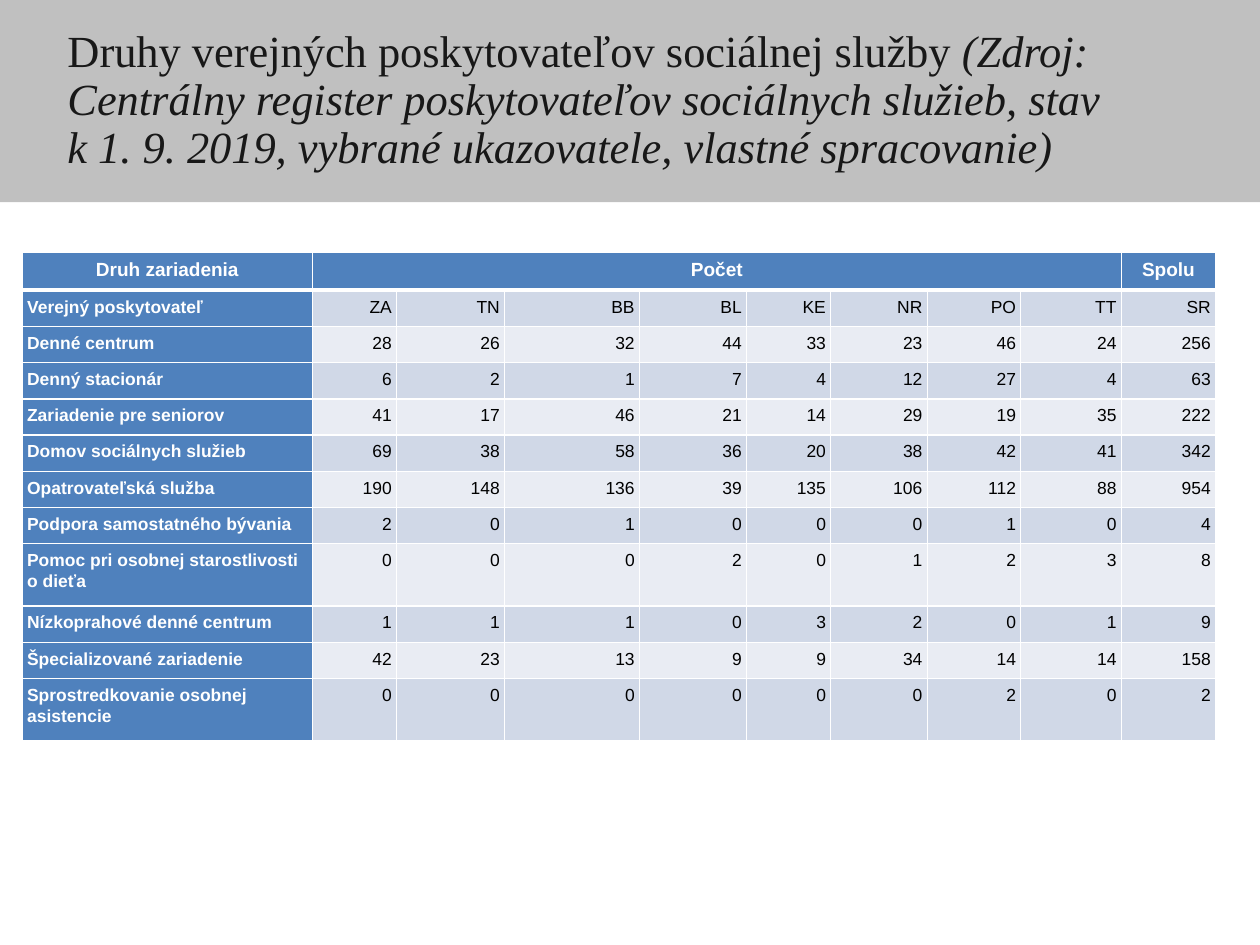
import dataclasses

import lxml.etree
import pptx
import pptx.dml.color
import pptx.enum.shapes
import pptx.enum.text
import pptx.oxml.ns
import pptx.util

Pt = pptx.util.Pt
Align = pptx.enum.text.PP_ALIGN


@dataclasses.dataclass(frozen=True)
class Theme:
    band: str = "C0C0C0"
    title: str = "181818"
    accent: str = "4F81BD"
    stripes: tuple = ("D0D8E7", "E9ECF3")
    light: str = "FFFFFF"
    dark: str = "000000"
    title_font: str = "Times New Roman"
    table_font: str = "Arial"
    title_size: float = 28
    header_size: float = 12
    body_size: float = 11
    rule: float = 0.96
    header_rule: float = 3


def rgb(value):
    return pptx.dml.color.RGBColor.from_string(value)


class SlideBuilder:
    def __init__(self, slide, theme):
        self.slide = slide
        self.theme = theme

    def style(self, p, font, size, color, align, line_spacing, bold=False):
        p.alignment = align
        p.line_spacing = line_spacing
        p.font.name = font
        p.font.size = Pt(size)
        p.font.bold = bold
        p.font.color.rgb = rgb(color)

    def band(self, left, top, width, height):
        sp = self.slide.shapes.add_shape(
            pptx.enum.shapes.MSO_SHAPE.RECTANGLE, Pt(left), Pt(top), Pt(width), Pt(height))
        sp.shadow.inherit = False
        sp.fill.solid()
        sp.fill.fore_color.rgb = rgb(self.theme.band)
        sp.line.fill.background()
        self.slide.shapes.title.element.addprevious(sp.element)

    def title(self, text, source, left, top, width, height):
        sp = self.slide.shapes.title
        sp.left, sp.top, sp.width, sp.height = Pt(left), Pt(top), Pt(width), Pt(height)
        tf = sp.text_frame
        tf.word_wrap = True
        tf.auto_size = pptx.enum.text.MSO_AUTO_SIZE.NONE
        tf.vertical_anchor = pptx.enum.text.MSO_ANCHOR.MIDDLE
        tf.margin_left = tf.margin_top = tf.margin_right = tf.margin_bottom = 0
        p = tf.paragraphs[0]
        self.style(p, self.theme.title_font, self.theme.title_size, self.theme.title,
                   Align.LEFT, 0.9)
        p.add_run().text = text
        r = p.add_run()
        r.text = source
        r.font.italic = True

    def borders(self, cell, row):
        qn = pptx.oxml.ns.qn
        tc_pr = cell._tc.get_or_add_tcPr()
        for side in "LRTB":
            thick = (row, side) in ((0, "B"), (1, "T"))
            width = self.theme.header_rule if thick else self.theme.rule
            ln = lxml.etree.SubElement(tc_pr, qn(f"a:ln{side}"), w=str(int(Pt(width))))
            fill = lxml.etree.SubElement(ln, qn("a:solidFill"))
            lxml.etree.SubElement(fill, qn("a:srgbClr"), val=self.theme.light)

    def cell(self, cell, row, col, text):
        theme = self.theme
        header = row == 0
        accent = header or col == 0
        self.borders(cell, row)
        cell.fill.solid()
        cell.fill.fore_color.rgb = rgb(theme.accent if accent else theme.stripes[(row - 1) % 2])
        cell.margin_left = cell.margin_right = Pt(3)
        cell.margin_top = cell.margin_bottom = Pt(3.6)
        p = cell.text_frame.paragraphs[0]
        p.text = str(text)
        p.space_after = Pt(8)
        align = Align.CENTER if header else Align.LEFT if col == 0 else Align.RIGHT
        self.style(p, theme.table_font, theme.header_size if header else theme.body_size,
                   theme.light if accent else theme.dark, align, 1.07, accent)

    def table(self, rows, widths, heights, left, top):
        table = self.slide.shapes.add_table(
            len(rows), len(widths), Pt(left), Pt(top), Pt(sum(widths)), Pt(sum(heights))).table
        table.horz_banding = False
        for column, width in zip(table.columns, widths):
            column.width = Pt(width)
        for i, (row, height) in enumerate(zip(rows, heights)):
            table.rows[i].height = Pt(height)
            for j, text in enumerate(row):
                self.cell(table.cell(i, j), i, j, text)
        table.cell(0, 1).merge(table.cell(0, len(widths) - 2))


NBSP = chr(160)
DATE = NBSP.join(["k", "1.", "9.", "2019"])
HEADER = ["Druh zariadenia", "Počet", *[""] * 7, "Spolu"]
ROWS = [
    HEADER,
    ["Verejný poskytovateľ", "ZA", "TN", "BB", "BL", "KE", "NR", "PO", "TT", "SR"],
    ["Denné centrum", 28, 26, 32, 44, 33, 23, 46, 24, 256],
    ["Denný stacionár", 6, 2, 1, 7, 4, 12, 27, 4, 63],
    ["Zariadenie pre seniorov", 41, 17, 46, 21, 14, 29, 19, 35, 222],
    ["Domov sociálnych služieb", 69, 38, 58, 36, 20, 38, 42, 41, 342],
    ["Opatrovateľská služba", 190, 148, 136, 39, 135, 106, 112, 88, 954],
    ["Podpora samostatného bývania", 2, 0, 1, 0, 0, 0, 1, 0, 4],
    [f"Pomoc pri osobnej starostlivosti o{NBSP}dieťa", 0, 0, 0, 2, 0, 1, 2, 3, 8],
    ["Nízkoprahové denné centrum", 1, 1, 1, 0, 3, 2, 0, 1, 9],
    ["Špecializované zariadenie", 42, 23, 13, 9, 9, 34, 14, 14, 158],
    ["Sprostredkovanie osobnej asistencie", 0, 0, 0, 0, 0, 0, 2, 0, 2],
]
WIDTHS = [182.8, 53, 68, 85, 67.5, 53, 60.8, 59, 63.3, 59.4]
ROW, TALL_ROW = 22.8, 39.4
HEIGHTS = [24.2, *[ROW] * 7, TALL_ROW, ROW, ROW, TALL_ROW]
SLIDE_WIDTH, SLIDE_HEIGHT = 793.7, 595.28


def main():
    prs = pptx.Presentation()
    prs.slide_width, prs.slide_height = Pt(SLIDE_WIDTH), Pt(SLIDE_HEIGHT)
    s = SlideBuilder(prs.slides.add_slide(prs.slide_layouts[5]), Theme())
    s.band(0, 0, SLIDE_WIDTH, 127.4)
    s.title("Druhy verejných poskytovateľov sociálnej služby ",
            "(Zdroj: Centrálny register poskytovateľov sociálnych služieb, "
            f"stav {DATE}, vybrané ukazovatele, vlastné spracovanie)",
            42.5, 14.4, 708.5, 98.6)
    s.table(ROWS, WIDTHS, HEIGHTS, 14.1, 158.7)
    prs.save("out.pptx")


if __name__ == "__main__":
    main()
